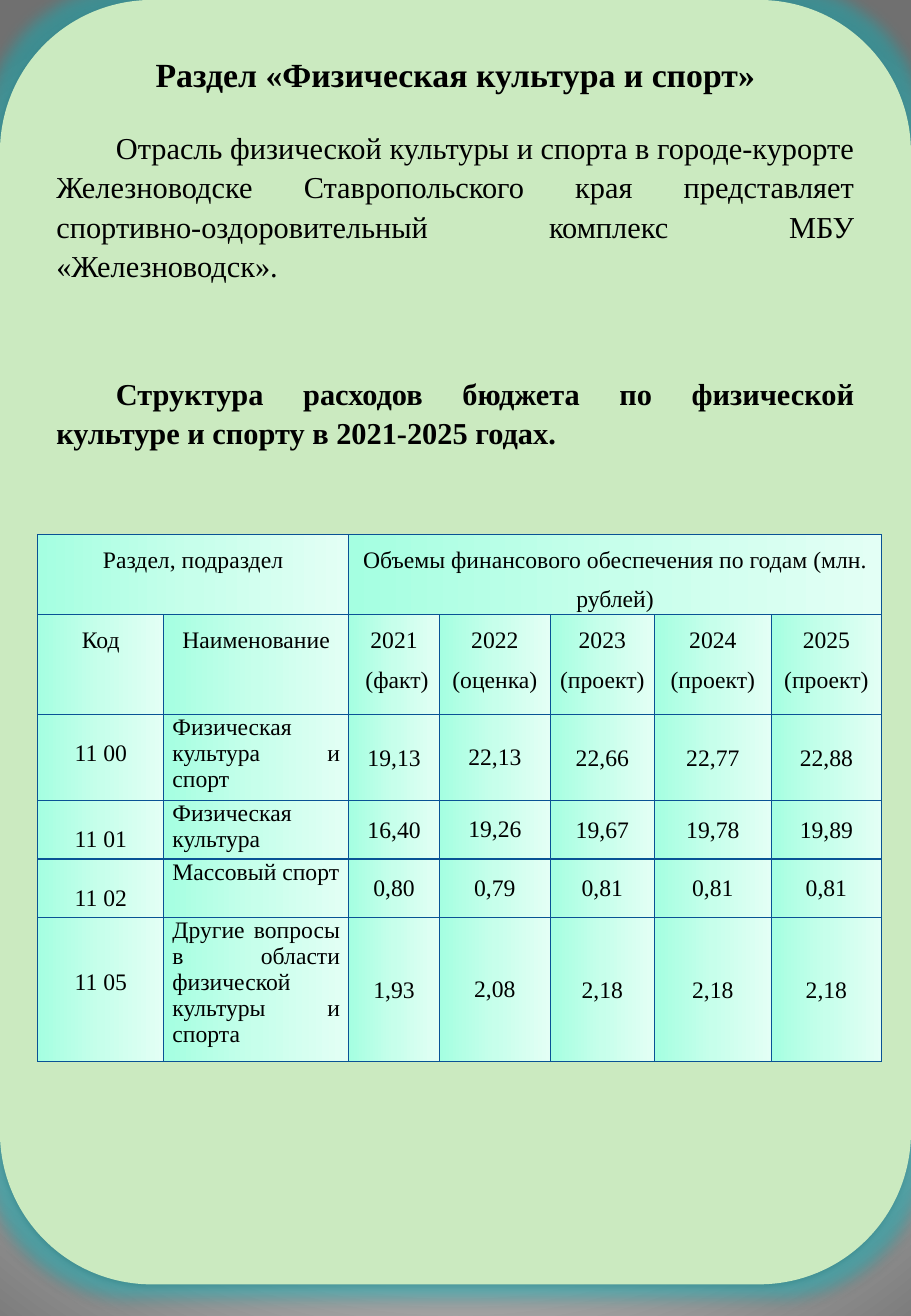
"""Build the slide on budget spending for physical culture and sport."""
from dataclasses import dataclass, field
from typing import Any

from lxml.etree import SubElement, _Element
from pptx import Presentation
from pptx.dml.color import RGBColor
from pptx.enum.shapes import MSO_SHAPE
from pptx.enum.text import MSO_ANCHOR, PP_ALIGN
from pptx.oxml.ns import qn
from pptx.slide import Slide
from pptx.table import _Cell
from pptx.text.text import _Paragraph
from pptx.util import Inches, Pt

BLACK = RGBColor(0x00, 0x00, 0x00)
WHITE = RGBColor(0xFF, 0xFF, 0xFF)
GRAY = RGBColor(0x70, 0x70, 0x70)
PALE_GREEN = RGBColor(0xCB, 0xEA, 0xC0)
TEAL_GLOW = RGBColor(0x0B, 0xD0, 0xD9)
BORDER_BLUE = RGBColor(0x09, 0x52, 0x95)
MINT_DARK = RGBColor(0xA5, 0xFF, 0xE1)
MINT = RGBColor(0xC7, 0xFF, 0xEB)
MINT_LIGHT = RGBColor(0xE3, 0xFF, 0xF5)

FONT = "Times New Roman"
COLUMN_WIDTHS = (1.04, 1.52, 0.75, 0.91, 0.86, 0.96, 0.91)
ROW_HEIGHTS = (0.66, 0.82, 0.71, 0.48, 0.48, 1.19)
YEAR_HEADINGS = ("2021\n (факт)", "2022 (оценка)", "2023 (проект)", "2024 (проект)", "2025 (проект)")

WIDE_MARGINS = {"margin_left": Inches(0.07), "margin_top": 0, "margin_right": Inches(0.07), "margin_bottom": 0}
NARROW_MARGINS = {"margin_left": Inches(0.01), "margin_top": Inches(0.01), "margin_right": Inches(0.01),
                  "margin_bottom": 0}
MIDDLE = {"vertical_anchor": MSO_ANCHOR.MIDDLE}
HEADING = {"alignment": PP_ALIGN.CENTER, "line_spacing": 1.5}


@dataclass(frozen=True)
class PanelText:
    """A paragraph of the green panel."""
    text: str
    size: int
    bold: bool
    indent: float
    layout: dict[str, Any] = field(default_factory=dict)


@dataclass(frozen=True)
class BudgetLine:
    """A budget subsection with its yearly amounts."""
    code: str
    title: str
    amounts: tuple[str, ...]
    code_spacing: float = 2.0


PANEL_TEXTS = (
    PanelText("Раздел «Физическая культура и спорт»", 20, True, 0, {"alignment": PP_ALIGN.CENTER}),
    PanelText("Отрасль физической культуры и спорта в городе-курорте Железноводске Ставропольского края "
              "представляет спортивно-оздоровительный комплекс МБУ «Железноводск».", 18, False, 0.49,
              {"alignment": PP_ALIGN.JUSTIFY, "space_before": Pt(19)}),
    PanelText("Структура расходов бюджета по физической культуре и спорту в 2021-2025 годах.", 18, True, 0.49,
              {"alignment": PP_ALIGN.JUSTIFY, "space_before": Pt(52.5)}),
)
BUDGET_LINES = (
    BudgetLine("11 00", "Физическая культура и спорт", ("19,13", "22,13", "22,66", "22,77", "22,88")),
    BudgetLine("11 01", "Физическая культура", ("16,40", "19,26", "19,67", "19,78", "19,89")),
    BudgetLine("11 02", "Массовый спорт", ("0,80", "0,79", "0,81", "0,81", "0,81")),
    BudgetLine("11 05", "Другие вопросы в области физической культуры и спорта",
               ("1,93", "2,08", "2,18", "2,18", "2,18"), 3.0),
)


def apply_format(target: Any, values: dict[str, Any]) -> None:
    """Set every named attribute on the target."""
    for name, value in values.items():
        setattr(target, name, value)


def add_node(parent: _Element, tag: str, **attributes: Any) -> _Element:
    """Append a drawing element with its attributes."""
    return SubElement(parent, qn(tag), {name: str(value) for name, value in attributes.items()})


def add_gradient(parent: _Element, stops: dict[int, RGBColor]) -> _Element:
    """Append a gradient fill with stops given in percent."""
    gradient = add_node(parent, "a:gradFill", rotWithShape=1)
    stop_list = add_node(gradient, "a:gsLst")
    for percent, color in stops.items():
        add_node(add_node(stop_list, "a:gs", pos=percent * 1000), "a:srgbClr", val=color)
    return gradient


def write_paragraph(paragraph: _Paragraph, text: str, size: int, bold: bool, layout: dict[str, Any]) -> None:
    """Write one formatted run into a paragraph."""
    apply_format(paragraph, layout)
    run = paragraph.add_run()
    run.text = text
    apply_format(run.font, {"name": FONT, "size": Pt(size), "bold": bold})
    run.font.color.rgb = BLACK


def paint_background(slide: Slide) -> None:
    """Fill the background with a circular gradient."""
    slide.background.fill.solid()
    properties = slide.element.find(".//" + qn("p:bgPr"))
    properties.remove(properties[0])
    gradient = add_gradient(properties, {0: WHITE, 25: WHITE, 100: GRAY})
    circle = add_node(gradient, "a:path", path="circle")
    add_node(circle, "a:fillToRect", l=10000, t=110000, r=10000, b=100000)
    properties.insert(0, gradient)


def add_panel(slide: Slide) -> None:
    """Draw the glowing green panel with its text."""
    panel = slide.shapes.add_shape(MSO_SHAPE.ROUNDED_RECTANGLE, 0, 0, Inches(7.5), Inches(10.57))
    panel.fill.solid()
    panel.fill.fore_color.rgb = PALE_GREEN
    panel.line.fill.background()
    panel.shadow.inherit = False
    effects = panel.element.spPr.find(qn("a:effectLst"))
    glow = add_node(effects, "a:glow", rad=Pt(18))
    shadow = add_node(effects, "a:outerShdw", blurRad=Pt(3.5), dist=Pt(2.2), dir=5400000, rotWithShape=0)
    for effect, color, opacity in ((glow, TEAL_GLOW, 40), (shadow, BLACK, 32)):
        add_node(add_node(effect, "a:srgbClr", val=color), "a:alpha", val=opacity * 1000)
    frame = panel.text_frame
    apply_format(frame, {"word_wrap": True, "vertical_anchor": MSO_ANCHOR.TOP})
    for index, item in enumerate(PANEL_TEXTS):
        paragraph = frame.add_paragraph() if index else frame.paragraphs[0]
        write_paragraph(paragraph, item.text, item.size, item.bold, {"line_spacing": 1.08, **item.layout})
        paragraph._p.get_or_add_pPr().set("indent", str(Inches(item.indent)))


def style_cell(cell: _Cell) -> None:
    """Give a cell blue borders and a mint gradient."""
    properties = cell._tc.get_or_add_tcPr()
    for side in "LRTB":
        border = add_node(properties, f"a:ln{side}", w=Pt(0.75))
        add_node(add_node(border, "a:solidFill"), "a:srgbClr", val=BORDER_BLUE)
    gradient = add_gradient(properties, {0: MINT_DARK, 50: MINT, 100: MINT_LIGHT})
    add_node(gradient, "a:lin", ang=0, scaled=1)


def write_cell(cell: _Cell, text: str, layout: dict[str, Any], placement: dict[str, Any]) -> None:
    """Write the lines of a cell as paragraphs."""
    apply_format(cell, placement)
    for index, line in enumerate(text.split("\n")):
        paragraph = cell.text_frame.add_paragraph() if index else cell.text_frame.paragraphs[0]
        write_paragraph(paragraph, line, 14, False, layout)


def add_budget_table(slide: Slide) -> None:
    """Draw the table of spending by subsection and year."""
    budget = slide.shapes.add_table(len(ROW_HEIGHTS), len(COLUMN_WIDTHS), Inches(0.31), Inches(4.4),
                                    Inches(sum(COLUMN_WIDTHS)), Inches(sum(ROW_HEIGHTS))).table
    apply_format(budget, {"first_row": False, "horz_banding": False})
    for column, width in zip(budget.columns, COLUMN_WIDTHS):
        column.width = Inches(width)
    for row, height in zip(budget.rows, ROW_HEIGHTS):
        row.height = Inches(height)
    for cell in budget.iter_cells():
        style_cell(cell)
    budget.cell(0, 0).merge(budget.cell(0, 1))
    budget.cell(0, 2).merge(budget.cell(0, 6))
    write_cell(budget.cell(0, 0), "Раздел, подраздел", HEADING, WIDE_MARGINS)
    write_cell(budget.cell(0, 2), "Объемы финансового обеспечения по годам (млн. рублей)", HEADING, WIDE_MARGINS)
    for column, heading in enumerate(("Код", "Наименование", *YEAR_HEADINGS)):
        write_cell(budget.cell(1, column), heading, HEADING, WIDE_MARGINS)
    for row, line in enumerate(BUDGET_LINES, start=2):
        code_layout = {"alignment": PP_ALIGN.CENTER, "line_spacing": line.code_spacing}
        write_cell(budget.cell(row, 0), line.code, code_layout, WIDE_MARGINS)
        write_cell(budget.cell(row, 1), line.title, {"alignment": PP_ALIGN.JUSTIFY}, WIDE_MARGINS)
        for column, amount in enumerate(line.amounts, start=2):
            margins = WIDE_MARGINS if column == 3 else NARROW_MARGINS
            write_cell(budget.cell(row, column), amount, {"alignment": PP_ALIGN.CENTER}, {**margins, **MIDDLE})


def main() -> None:
    """Assemble and save the presentation."""
    presentation = Presentation()
    apply_format(presentation, {"slide_width": Inches(7.5), "slide_height": Inches(10.83)})
    slide = presentation.slides.add_slide(presentation.slide_layouts[6])
    paint_background(slide)
    add_panel(slide)
    add_budget_table(slide)
    presentation.save("out.pptx")


if __name__ == "__main__":
    main()
